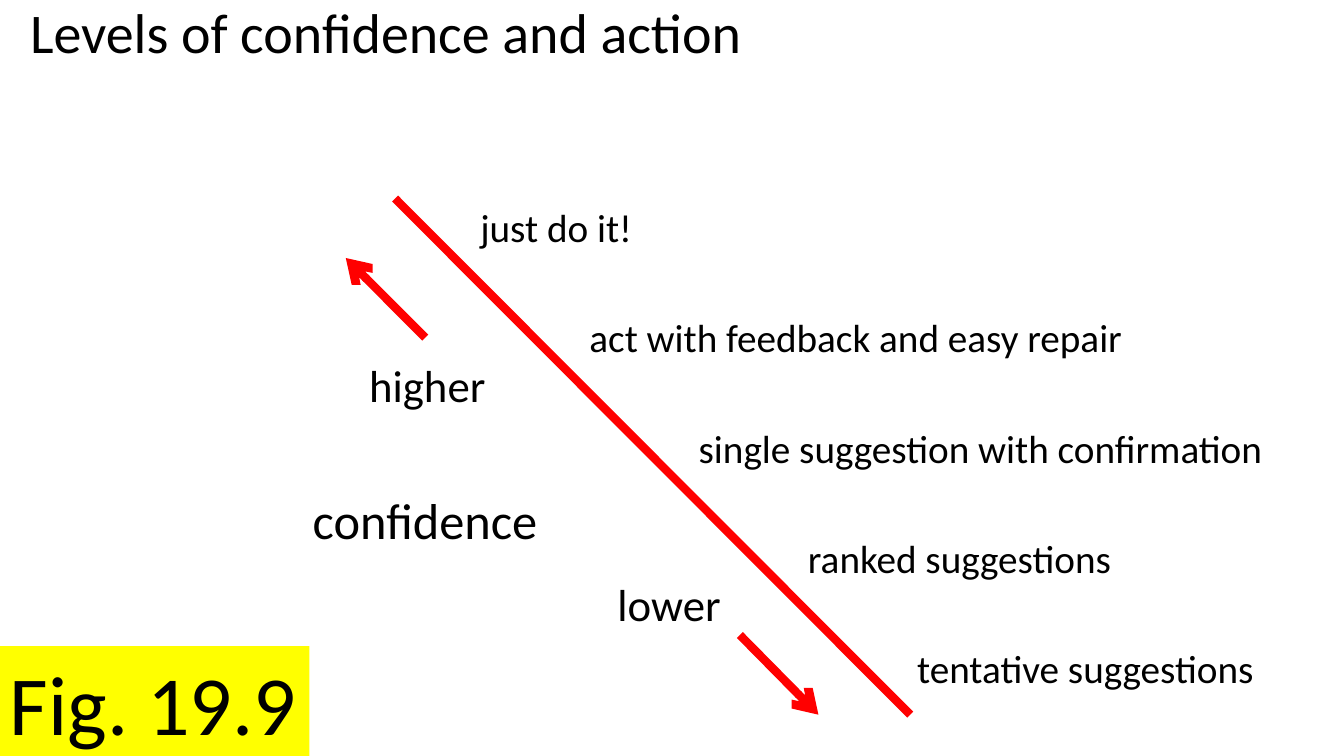
"""Build the slide on levels of confidence and action."""
from lxml.etree import SubElement
from pptx import Presentation
from pptx.dml.color import RGBColor
from pptx.enum.shapes import MSO_CONNECTOR as Connector, MSO_SHAPE as Shape
from pptx.enum.text import MSO_ANCHOR as Anchor, PP_ALIGN as Align
from pptx.oxml.ns import qn
from pptx.util import Pt

COLORS = {"text": "000000", "scale": "FF0000", "label": "FFFF00"}
LEVELS = [
    ("just do it!", 223),
    ("act with feedback and easy repair", 410),
    ("single suggestion with confirmation", 456.5),
    ("ranked suggestions", 253),
    ("tentative suggestions", 301),
]


class SlideBuilder:
    def __init__(self, slide, font="Calibri"):
        self.slide = slide
        self.font = font

    def color(self, name):
        return RGBColor.from_string(COLORS[name])

    def set_text(self, box, text, size, align=Align.LEFT, wrap=True):
        frame = box.text_frame
        frame.text = text
        frame.word_wrap = wrap
        frame.vertical_anchor = Anchor.TOP
        para = frame.paragraphs[0]
        para.alignment = align
        for span in para.runs:
            span.font.name = self.font
            span.font.size = Pt(size)
            span.font.color.rgb = self.color("text")
        return para

    def text(self, text, left, top, width, height, size, align=Align.LEFT):
        box = self.slide.shapes.add_textbox(Pt(left), Pt(top), Pt(width), Pt(height))
        return self.set_text(box, text, size, align)

    def label(self, text, left, top, width, height, size):
        box = self.slide.shapes.add_shape(
            Shape.RECTANGLE, Pt(left), Pt(top), Pt(width), Pt(height))
        box.shadow.inherit = False
        box.fill.solid()
        box.fill.fore_color.rgb = self.color("label")
        box.line.fill.background()
        self.set_text(box, text, size, wrap=False)

    def line(self, start, end, arrow=False):
        line = self.slide.shapes.add_connector(
            Connector.STRAIGHT, *(Pt(value) for value in (*start, *end)))
        line.line.color.rgb = self.color("scale")
        line.line.width = Pt(6)
        properties = line._element.spPr
        if arrow:
            SubElement(properties.find(qn("a:ln")), qn("a:tailEnd"), type="arrow")
        SubElement(properties, qn("a:effectLst"))


def main():
    deck = Presentation()
    deck.slide_width, deck.slide_height = Pt(960), Pt(540)
    builder = SlideBuilder(deck.slides.add_slide(deck.slide_layouts[6]))

    title = builder.text("Levels of confidence and action", 14.4, 0, 931, 128, 40)
    title.line_spacing = 0.9

    for step, (level, width) in enumerate(LEVELS):
        builder.text(level, 336 + 78 * step, 141.8 + 78.7 * step, width, 41, 28)

    builder.text("higher", 169, 252, 185, 46, 32, Align.RIGHT)
    builder.text("confidence", 150.5, 345.6, 240.5, 51, 36, Align.RIGHT)
    builder.text("lower", 392.4, 408.2, 129.6, 46, 32, Align.RIGHT)

    builder.line((282.2, 141.8), (650.2, 510.5))
    builder.line((303.8, 241.2), (247, 184.3), arrow=True)
    builder.line((528.5, 453.6), (584.6, 510.5), arrow=True)

    builder.label("Fig. 19.9", 0, 461.5, 221, 80, 60)
    deck.save("out.pptx")


if __name__ == "__main__":
    main()
